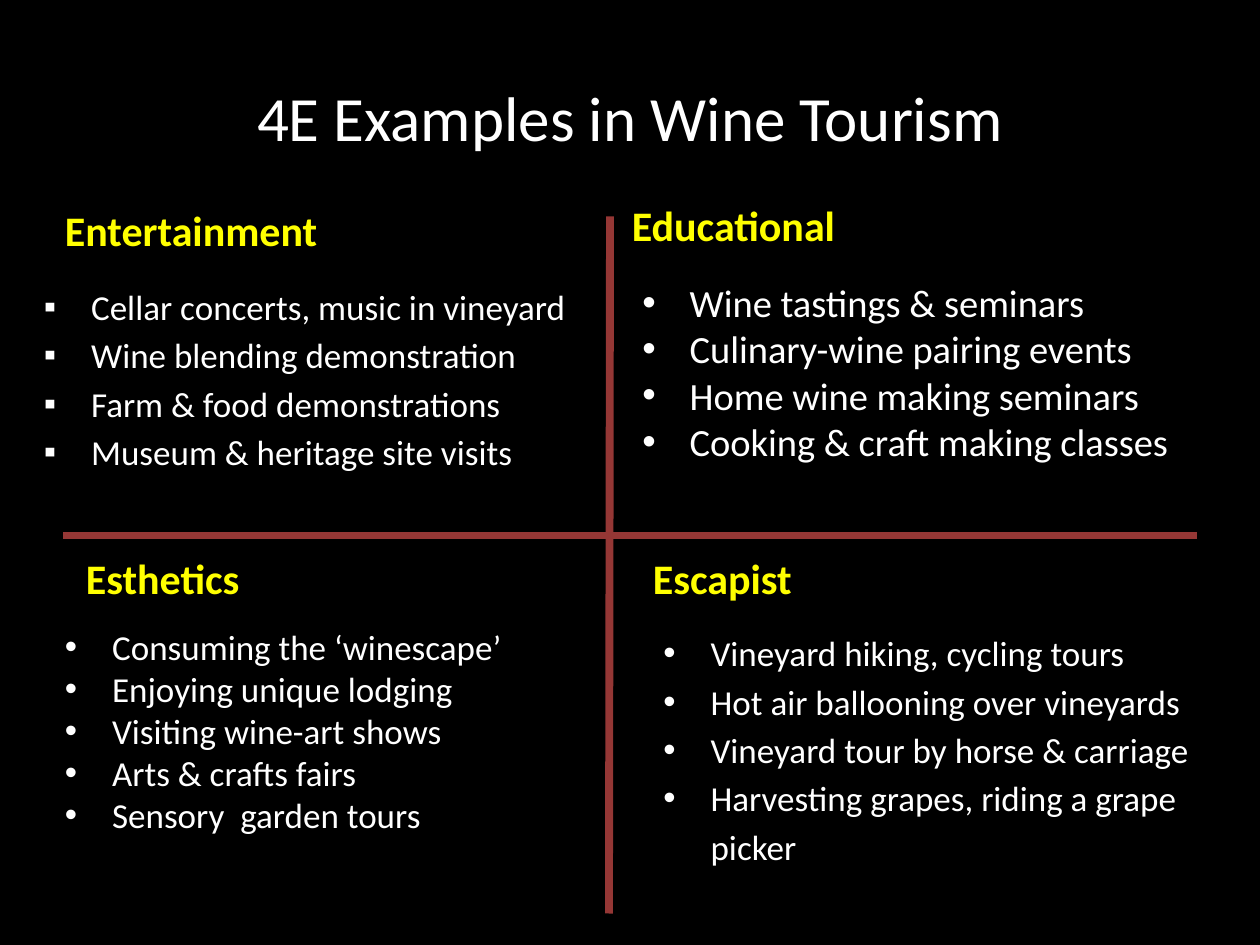
"""Builds a four-quadrant slide of wine tourism experiences."""
from dataclasses import dataclass

from lxml import etree
from pptx import Presentation, util as u
from pptx.dml.color import RGBColor as Rgb
from pptx.enum import shapes, text
from pptx.oxml.ns import qn


@dataclass(frozen=True)
class Theme:
    font: str = "Calibri"
    back: Rgb = Rgb(0, 0, 0)
    ink: Rgb = Rgb(255, 255, 255)
    head: Rgb = Rgb(255, 255, 0)
    rule: Rgb = Rgb(0x95, 0x37, 0x35)
    title: int = 36
    sub: int = 24
    list: int = 20
    large: int = 22
    weight: float = 4.5


PX = u.Inches(1) // 120
WIDE = 530
INDENT = 45
look = Theme()


def write(box, lines, size=look.list, color=look.ink, bold=False, bullet=None,
          space=1.0, before=0, align=text.PP_ALIGN.LEFT, anchor=text.MSO_ANCHOR.TOP):
    """Fill a box with formatted paragraphs, bulleted on request."""
    frame = box.text_frame
    frame.word_wrap = True
    frame.auto_size = text.MSO_AUTO_SIZE.NONE
    frame.vertical_anchor = anchor
    frame.text = "\n".join(lines)
    for para in frame.paragraphs:
        para.alignment = align
        para.line_spacing = space
        para.space_before = u.Pt(before)
        font = para.runs[0].font
        font.name, font.size, font.bold = look.font, u.Pt(size), bold
        font.color.rgb = color
        if bullet:
            prop = para._p.get_or_add_pPr()
            prop.set("marL", str(INDENT * PX))
            prop.set("indent", str(-INDENT * PX))
            etree.SubElement(prop, qn("a:buFont")).set("typeface", "Arial")
            etree.SubElement(prop, qn("a:buChar")).set("char", bullet)


deck = Presentation()
deck.slide_width, deck.slide_height = 1200 * PX, 900 * PX
slide = deck.slides.add_slide(deck.slide_layouts[5])
slide.background.fill.solid()
slide.background.fill.fore_color.rgb = look.back

title = slide.shapes.title
title.left, title.top, title.width, title.height = (n * PX for n in (60, 36, 1080, 150))
write(title, ["4E Examples in Wine Tourism"], size=look.title,
      align=text.PP_ALIGN.CENTER, anchor=text.MSO_ANCHOR.MIDDLE)

for ends in ((581, 206, 580, 870), (60, 510, 1140, 510)):
    line = slide.shapes.add_connector(
        shapes.MSO_CONNECTOR.STRAIGHT, *(n * PX for n in ends))
    line.line.color.rgb = look.rule
    line.line.width = u.Pt(look.weight)
    etree.SubElement(line._element.spPr, qn("a:effectLst"))

parts = [
    ("Entertainment", (50, 160, 89), (30, 260, 245),
     dict(bullet="▪", space=1.15),
     ["Cellar concerts, music in vineyard", "Wine blending demonstration",
      "Farm & food demonstrations", "Museum & heritage site visits"]),
    ("Educational", (590, 160, 84), (600, 260, 224),
     dict(bullet="•", size=look.large),
     ["Wine tastings & seminars", "Culinary-wine pairing events",
      "Home wine making seminars", "Cooking & craft making classes"]),
    ("Esthetics", (70, 510, 70), (50, 590, 224),
     dict(bullet="•"),
     ["Consuming the ‘winescape’", "Enjoying unique lodging",
      "Visiting wine-art shows", "Arts & crafts fairs",
      "Sensory  garden tours"]),
    ("Escapist", (610, 520, 60), (620, 590, 245),
     dict(bullet="•", space=1.15),
     ["Vineyard hiking, cycling tours", "Hot air ballooning over vineyards",
      "Vineyard tour by horse & carriage",
      "Harvesting grapes, riding a grape picker"]),
]
heading = dict(size=look.sub, color=look.head, bold=True, before=5,
               anchor=text.MSO_ANCHOR.BOTTOM)
for name, top, low, form, items in parts:
    for (x, y, high), lines, style in ((top, [name], heading), (low, items, form)):
        box = slide.shapes.add_textbox(x * PX, y * PX, WIDE * PX, high * PX)
        write(box, lines, **style)

deck.save("out.pptx")
